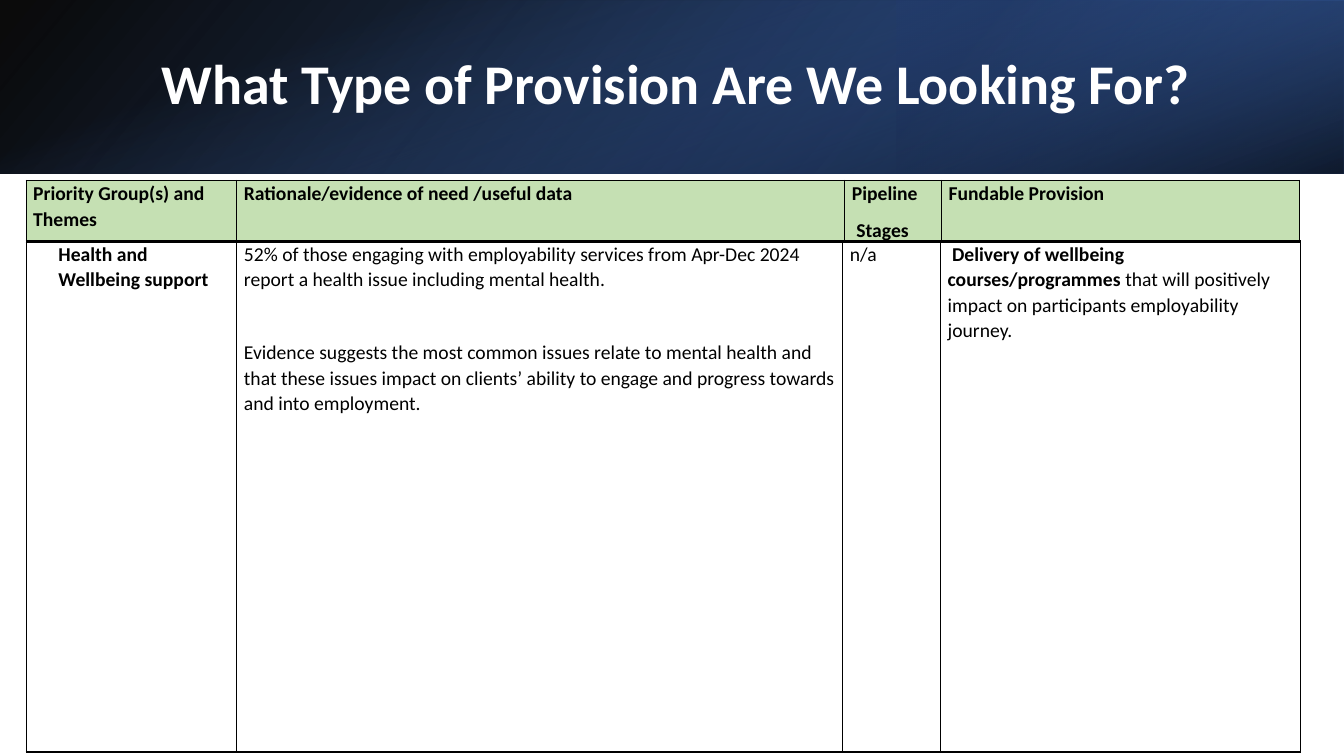
from dataclasses import dataclass

from lxml import etree
from pptx import Presentation
from pptx.dml.color import RGBColor
from pptx.enum.shapes import MSO_SHAPE
from pptx.enum.text import MSO_ANCHOR, MSO_AUTO_SIZE, PP_ALIGN
from pptx.oxml.ns import qn
from pptx.util import Inches, Pt

RECTANGLE = MSO_SHAPE.RECTANGLE
MIDDLE = MSO_ANCHOR.MIDDLE
TOP = MSO_ANCHOR.TOP
NO_AUTOFIT = MSO_AUTO_SIZE.NONE
LEFT = PP_ALIGN.LEFT


@dataclass(frozen=True)
class Theme:
    font: str = "Calibri"
    title_size: int = 40
    table_size: int = 14
    title_color: str = "FFFFFF"
    text_color: str = "000000"
    border_color: str = "000000"
    header_fill: str = "C5E0B3"
    black: str = "000000"
    blue: str = "4472C4"
    mid_blue: str = "2F5597"
    navy: str = "203864"


def add_text(paragraph, text, *, font, size, color, bold=False):
    run = paragraph.add_run()
    run.text = text
    run.font.name = font
    run.font.size = Pt(size)
    run.font.bold = bold
    run.font.color.rgb = RGBColor.from_string(color)


class SlideBuilder:
    def __init__(self, slide, theme):
        self.slide = slide
        self.theme = theme

    def gradient_band(self, left, top, width, height, stops, angle, rotation=0, flip=False):
        """Add a rectangle; stops are (position %, colour, opacity %)."""
        band = self.slide.shapes.add_shape(
            RECTANGLE, Inches(left), Inches(top), Inches(width), Inches(height))
        band.shadow.inherit = False
        band.line.fill.background()
        band.rotation = rotation
        properties = band._element.spPr
        if flip:
            properties.find(qn("a:xfrm")).set("flipH", "1")
        band.fill.gradient()
        gradient = properties.find(qn("a:gradFill"))
        for child in list(gradient):
            gradient.remove(child)
        stop_list = etree.SubElement(gradient, qn("a:gsLst"))
        for position, color, opacity in stops:
            stop = etree.SubElement(stop_list, qn("a:gs"), pos=str(position * 1000))
            tint = etree.SubElement(stop, qn("a:srgbClr"), val=color)
            etree.SubElement(tint, qn("a:alpha"), val=str(opacity * 1000))
        etree.SubElement(gradient, qn("a:lin"), ang=str(angle * 60000), scaled="0")

    def title(self, text, left, top, width, height):
        heading = self.slide.shapes.title
        heading.left, heading.top = Inches(left), Inches(top)
        heading.width, heading.height = Inches(width), Inches(height)
        frame = heading.text_frame
        frame.word_wrap = True
        frame.auto_size = NO_AUTOFIT
        frame.vertical_anchor = MIDDLE
        paragraph = frame.paragraphs[0]
        paragraph.alignment = LEFT
        paragraph.line_spacing = 0.9
        add_text(paragraph, text, font=self.theme.font, size=self.theme.title_size,
                 color=self.theme.title_color, bold=True)
        # Bring the title in front of the bands
        self.slide.shapes._spTree.append(heading._element)

    def table_row(self, left, top, height, widths, cells, fill=None, gap=8, first_indent=0):
        """Add a one-row table; each cell is a list of paragraphs of (text, bold) runs."""
        table = self.slide.shapes.add_table(
            1, len(widths), Inches(left), Inches(top),
            Inches(sum(widths)), Inches(height)).table
        table.first_row = table.horz_banding = False
        for index, (width, paragraphs) in enumerate(zip(widths, cells)):
            table.columns[index].width = Inches(width)
            cell = table.cell(0, index)
            self.format_cell(cell, fill)
            self.fill_cell(cell, paragraphs, gap, 0 if index else first_indent)

    def format_cell(self, cell, fill):
        cell.margin_left = cell.margin_right = Inches(0.07)
        cell.margin_top = cell.margin_bottom = 0
        cell.vertical_anchor = TOP
        if fill:
            cell.fill.solid()
            cell.fill.fore_color.rgb = RGBColor.from_string(fill)
        else:
            cell.fill.background()
        properties = cell._tc.get_or_add_tcPr()
        for position, side in enumerate(("lnL", "lnR", "lnT", "lnB")):
            border = etree.Element(qn(f"a:{side}"), w=str(Pt(1)))
            solid = etree.SubElement(border, qn("a:solidFill"))
            etree.SubElement(solid, qn("a:srgbClr"), val=self.theme.border_color)
            properties.insert(position, border)

    def fill_cell(self, cell, paragraphs, gap, indent):
        frame = cell.text_frame
        for index, runs in enumerate(paragraphs):
            paragraph = frame.add_paragraph() if index else frame.paragraphs[0]
            paragraph.line_spacing = 1.07
            paragraph.space_after = Pt(gap)
            if indent:
                paragraph._p.get_or_add_pPr().set("marL", str(Inches(indent)))
            for text, bold in runs:
                add_text(paragraph, text, font=self.theme.font, size=self.theme.table_size,
                         color=self.theme.text_color, bold=bold)


def main():
    theme = Theme()
    presentation = Presentation()
    presentation.slide_width, presentation.slide_height = Inches(13.33), Inches(7.5)
    slide = presentation.slides.add_slide(presentation.slide_layouts[5])
    builder = SlideBuilder(slide, theme)

    builder.gradient_band(0, 0, 13.33, 1.72,
                          [(0, theme.black, 96), (100, theme.mid_blue, 100)], 140, flip=True)
    builder.gradient_band(8.89, 0, 4.44, 1.72,
                          [(19, theme.navy, 68), (100, theme.blue, 79)], 320,
                          rotation=180, flip=True)
    builder.gradient_band(5.8, -5.8, 1.72, 13.33,
                          [(23, theme.blue, 0), (99, theme.black, 74)], 340, rotation=90)
    builder.title("What Type of Provision Are We Looking For?", 1.5, 0.38, 10.98, 0.96)

    headings = [
        ["Priority Group(s) and Themes"],
        ["Rationale/evidence of need /useful data"],
        ["Pipeline", " Stages"],
        ["Fundable Provision"],
    ]
    builder.table_row(0.26, 1.79, 0.55, [2.09, 6.03, 0.96, 3.55],
                      [[[(line, True)] for line in heading] for heading in headings],
                      fill=theme.header_fill)

    wellbeing = [
        [[("Health and Wellbeing support", True)]],
        [[("52% of those engaging with employability services from Apr-Dec 2024 "
           "report a health issue including mental health.", False)],
         [("Evidence suggests the most common issues relate to mental health and "
           "that these issues impact on clients’ ability to engage and progress "
           "towards and into employment.", False)]],
        [[("n/a", False)]],
        [[(" ", False), ("Delivery of wellbeing courses/programmes", True),
          (" that will positively impact on participants employability journey.", False)]],
    ]
    builder.table_row(0.26, 2.39, 5.07, [2.09, 6.01, 0.97, 3.57], wellbeing,
                      gap=34, first_indent=0.25)

    presentation.save("out.pptx")


if __name__ == "__main__":
    main()
